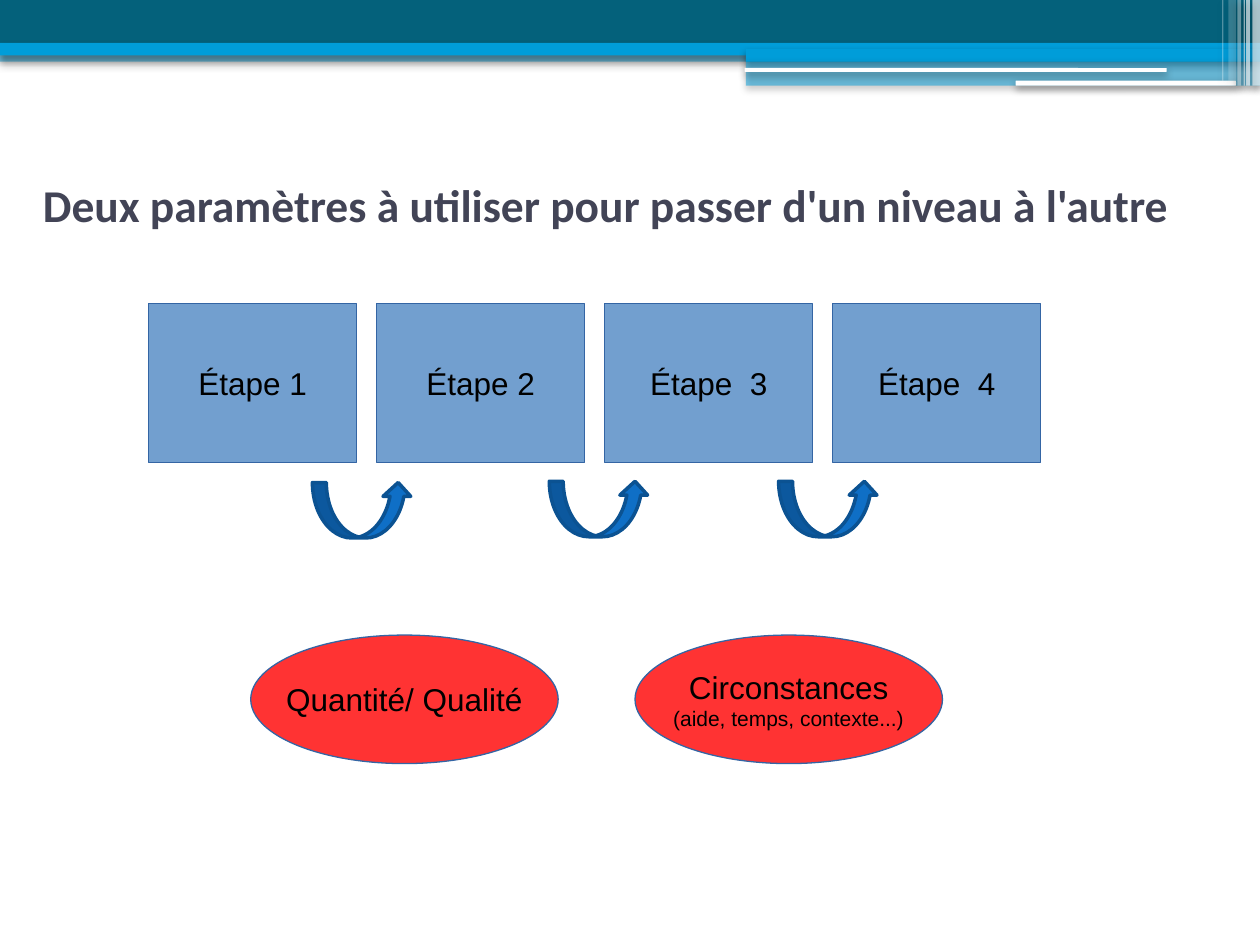
from lxml import etree
from pptx import Presentation
from pptx.dml.color import RGBColor
from pptx.enum.shapes import MSO_SHAPE
from pptx.enum.text import MSO_ANCHOR, MSO_AUTO_SIZE, PP_ALIGN
from pptx.oxml.ns import qn
from pptx.util import Inches, Pt

RECT, ROUND, OVAL = MSO_SHAPE.RECTANGLE, MSO_SHAPE.ROUNDED_RECTANGLE, MSO_SHAPE.OVAL
CURVED_ARROW = MSO_SHAPE.CURVED_UP_ARROW
LEFT, CENTER = PP_ALIGN.LEFT, PP_ALIGN.CENTER
MIDDLE, NO_FIT = MSO_ANCHOR.MIDDLE, MSO_AUTO_SIZE.NONE

COLORS = {
    "teal": "04617B", "cyan": "009DD9", "white": "FFFFFF", "black": "000000",
    "title": "424456", "step": "729FCF", "outline": "3465A4",
    "factor": "FF3333", "arrow": "0F6FC6", "arrow_edge": "0B5292",
}


def rgb(name):
    """Return a named colour."""
    return RGBColor.from_string(COLORS[name])


def write(p, text, size=18, font="Arial", color="black", bold=False, align=CENTER):
    """Put one formatted run in a paragraph."""
    p.alignment = align
    r = p.add_run()
    r.text = text
    r.font.size, r.font.name, r.font.bold = Pt(size), font, bold
    r.font.color.rgb = rgb(color)


class Deck:
    """Slide builder on a grid of 100 columns by 75 rows."""

    def __init__(self):
        """Open a presentation with one title-only slide."""
        self.prs = Presentation()
        self.prs.slide_width, self.prs.slide_height = Inches(10), Inches(7.5)
        self.s = self.prs.slides.add_slide(self.prs.slide_layouts[5])

    def box(self, col, row, cols, rows):
        """Turn grid units into lengths."""
        w, h = self.prs.slide_width / 100, self.prs.slide_height / 75
        return [round(v) for v in (col * w, row * h, cols * w, rows * h)]

    def title(self, text, *cell):
        """Place and fill the title placeholder."""
        sp = self.s.shapes.title
        sp.left, sp.top, sp.width, sp.height = self.box(*cell)
        tf = sp.text_frame
        tf.auto_size, tf.word_wrap, tf.vertical_anchor = NO_FIT, True, MIDDLE
        write(tf.paragraphs[0], text, size=26, font="Calibri", color="title",
              bold=True, align=LEFT)

    def shape(self, kind, cell, fill, line=None, weight=0.75):
        """Add a flat preset shape."""
        sp = self.s.shapes.add_shape(kind, *self.box(*cell))
        sp.shadow.inherit = False
        sp.fill.solid()
        sp.fill.fore_color.rgb = rgb(fill)
        if line:
            sp.line.color.rgb, sp.line.width = rgb(line), Pt(weight)
        else:
            sp.line.fill.background()
        return sp

    def band(self, cell, fill, alpha=100, kind=RECT):
        """Add a header band with opacity and a soft shadow."""
        sp = self.shape(kind, cell, fill)
        if kind == ROUND:
            sp.adjustments[0] = 0.14
        props = sp._element.spPr
        if alpha < 100:
            color = props.find(qn("a:solidFill"))[0]
            etree.SubElement(color, qn("a:alpha"), val=str(alpha * 1000))
        shadow = etree.SubElement(
            props.find(qn("a:effectLst")), qn("a:outerShdw"), blurRad=str(Pt(4.1)),
            dist=str(Pt(2)), dir="5400000", algn="ctr", rotWithShape="0")
        color = etree.SubElement(shadow, qn("a:srgbClr"), val=COLORS["black"])
        etree.SubElement(color, qn("a:alpha"), val="40000")

    def label(self, kind, cell, fill, *lines):
        """Add an outlined shape with centred lines of (text, size)."""
        tf = self.shape(kind, cell, fill, "outline").text_frame
        tf.word_wrap, tf.vertical_anchor = False, MIDDLE
        for i, (text, size) in enumerate(lines):
            write(tf.add_paragraph() if i else tf.paragraphs[0], text, size=size)

    def arrow(self, *cell):
        """Add a curved arrow."""
        self.shape(CURVED_ARROW, cell, "arrow", "arrow_edge", 2)


def main():
    """Build and save the slide."""
    d = Deck()
    d.band((0, 4, 100, 0.9), "cyan", 50)
    d.band((0, 0, 100, 3.4), "teal")
    d.band((0, 3.4, 100, 1), "cyan")
    d.band((59.2, 3.9, 40.8, 1), "cyan")
    d.band((59.2, 4.8, 40.8, 2), "cyan", 50)
    d.band((59.1, 5.4, 33.5, 0.3), "white", kind=ROUND)
    d.band((80.6, 6.4, 17.5, 0.4), "white", kind=ROUND)
    for col, cols, rows, alpha in (
            (99.4, 0.6, 6.8, 66), (98.9, 0.3, 6.8, 66), (98.7, 0.1, 6.8, 60),
            (98.2, 0.3, 6.8, 40), (97.5, 0.6, 6.4, 20), (97, 0.1, 6.4, 31)):
        d.band((col, 0, cols, rows), "white", alpha)

    d.title("Deux paramètres à utiliser pour passer d'un niveau à l'autre",
            2.4, 8.4, 95.3, 15.7)

    for i, text in enumerate(("Étape 1", "Étape 2", "Étape  3", "Étape  4")):
        d.label(RECT, (11.8 + 18.1 * i, 24.1, 16.5, 12.6), "step", (text, 18))

    factors = ([("Quantité/ Qualité", 18)],
               [("Circonstances", 18), ("(aide, temps, contexte...)", 12)])
    for i, lines in enumerate(factors):
        d.label(OVAL, (19.9 + 30.5 * i, 50.4, 24.4, 10.2), "factor", *lines)

    for col, row in ((24.8, 38.3), (43.6, 38.2), (61.8, 38.2)):
        d.arrow(col, row, 7.9, 4.4)

    d.prs.save("out.pptx")


if __name__ == "__main__":
    main()
